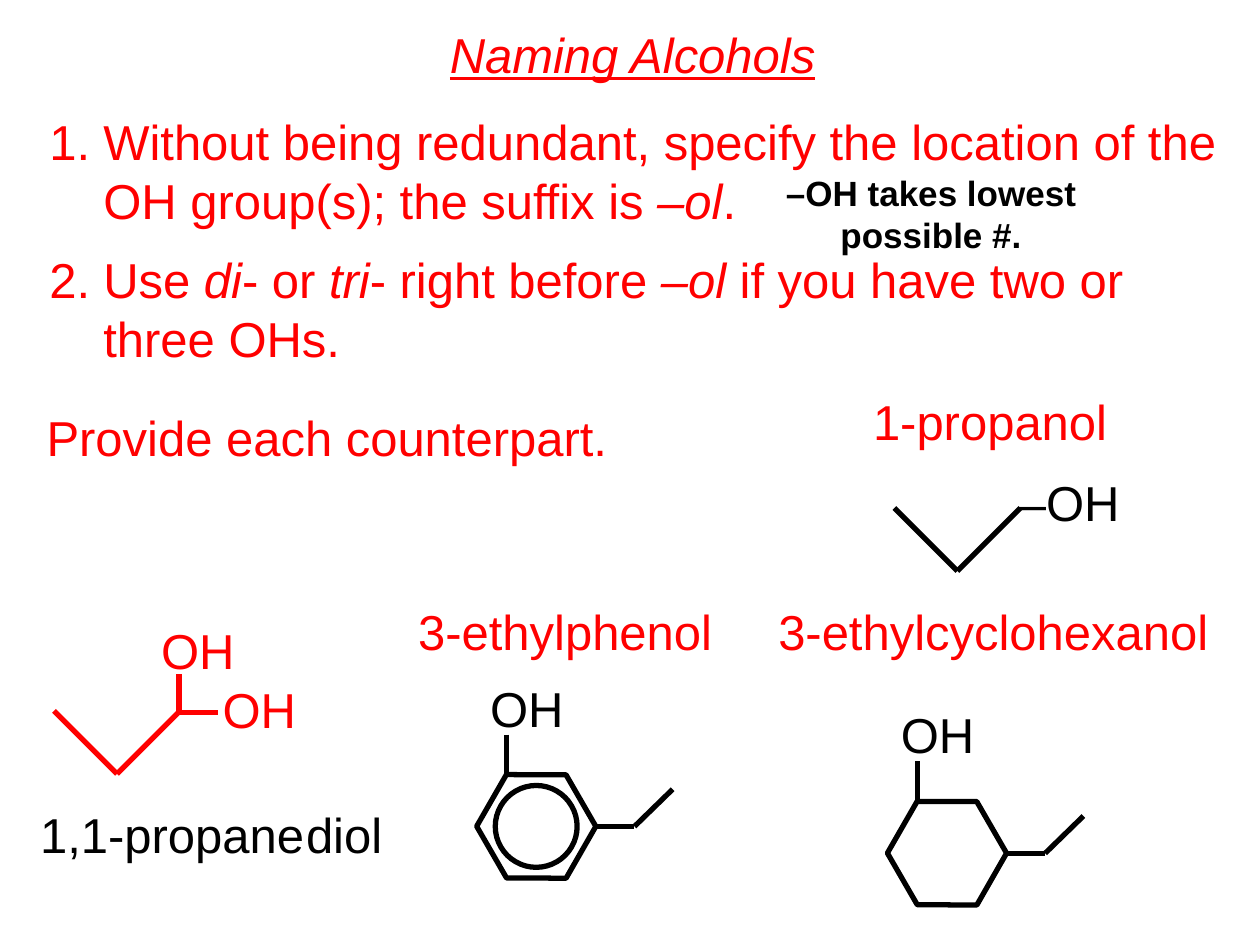
"""Build the Naming Alcohols slide."""
from lxml import etree
from pptx import Presentation
from pptx.dml.color import RGBColor
from pptx.enum.shapes import MSO_CONNECTOR, MSO_SHAPE
from pptx.enum.text import MSO_ANCHOR, MSO_AUTO_SIZE, PP_ALIGN
from pptx.oxml.ns import qn
from pptx.util import Cm, Pt

LEFT, CENTER = PP_ALIGN.LEFT, PP_ALIGN.CENTER
MIDDLE, NO_FIT = MSO_ANCHOR.MIDDLE, MSO_AUTO_SIZE.NONE
STRAIGHT = MSO_CONNECTOR.STRAIGHT
HEXAGON, OVAL = MSO_SHAPE.HEXAGON, MSO_SHAPE.OVAL
COLORS = {"red": "FF0000", "black": "000000"}
FONT = "Arial"
LINE_H = 1.45

TITLE = "*Naming Alcohols*"
TITLE_BOX = (8.79, 0.36, 7.92, LINE_H)
RULES = [
    "Without being redundant, specify the location of the OH group(s); the suffix is *–ol*.",
    "Use *di*- or *tri*- right before *–ol* if you have two or three OHs.",
]
RULES_BOX = (0.74, 2.11, 24.33, 5.43)
NOTE = ["–OH takes lowest", "possible #."]
NOTE_BOX = (15.57, 3.33, 6.4, 1.96)

# text, left, top, width, color
LABELS = [
    ("1-propanol", 17.35, 7.77, 5.54, "red"),
    ("1,1-propane", 0.56, 16.08, 6.12, "black"),
    ("diol", 5.92, 16.08, 2.34, "black"),
    ("3-ethylcyclohexanol", 15.44, 11.99, 9.47, "red"),
    ("3-ethylphenol", 8.18, 11.99, 6.73, "red"),
    ("–OH", 20.29, 9.4, 2.82, "black"),
    ("Provide each counterpart.", 0.69, 8.08, 12.12, "red"),
    ("OH", 4.24, 13.56, 1.98, "red"),
    ("OH", 3.0, 12.37, 1.98, "red"),
]
CHAINS = [(18.03, 10.24, "black"), (1.09, 14.33, "red")]
ZIGZAG = [(0, 0), (1.27, 1.27), (2.54, 0)]
DIOL_BONDS = [(3.61, 13.59), (3.61, 14.36), (4.39, 14.36)]
RINGS = [(10.81, 16.66, True), (19.09, 17.2, False)]
ETHYL = [(1.21, 0), (1.98, 0), (2.75, -0.75)]
OH_BOND = [(-0.6, -1.85), (-0.6, -1.07)]
OH_OFFSET = (-1.18, -3.12)


def write(tf, text, size=28, color="red", bold=False, underline=False,
          align=LEFT, wrap=False, spacing=None, before=0):
    """Fill a frame with paragraphs; asterisks enclose italics."""
    tf.auto_size, tf.word_wrap, tf.vertical_anchor = NO_FIT, wrap, MIDDLE
    lines = [text] if isinstance(text, str) else text
    for i, line in enumerate(lines):
        p = tf.add_paragraph() if i else tf.paragraphs[0]
        p.alignment = align
        p.space_before = Pt(before if i else 0)
        if spacing:
            p.line_spacing = Pt(spacing)
        for j, part in enumerate(line.split("*")):
            if part:
                r = p.add_run()
                r.text = part
                f = r.font
                f.name, f.size, f.bold = FONT, Pt(size), bold
                f.italic, f.underline = j % 2 == 1, underline
                f.color.rgb = RGBColor.from_string(COLORS[color])


def place(sp, box):
    """Move a placeholder to a box in centimetres."""
    sp.left, sp.top, sp.width, sp.height = map(Cm, box)


def add_label(s, text, box, **fmt):
    """Add a text box."""
    write(s.shapes.add_textbox(*map(Cm, box)).text_frame, text, **fmt)


def number(p):
    """Give a paragraph automatic numbering with a hanging indent."""
    pPr = p._p.get_or_add_pPr()
    pPr.set("marL", str(Cm(1.09)))
    pPr.set("indent", str(Cm(-1.09)))
    clr = etree.SubElement(pPr, qn("a:buClr"))
    etree.SubElement(clr, qn("a:srgbClr"), val=COLORS["red"])
    etree.SubElement(pPr, qn("a:buFont"), typeface=FONT)
    etree.SubElement(pPr, qn("a:buAutoNum"), type="arabicPeriod")


def stroke(sp, color):
    """Set a solid bond line."""
    sp.line.color.rgb = RGBColor.from_string(COLORS[color])
    sp.line.width = Pt(3)


def add_bonds(s, points, color="black", x=0, y=0):
    """Join successive points with straight bonds."""
    for (x1, y1), (x2, y2) in zip(points, points[1:]):
        ends = (x + x1, y + y1, x + x2, y + y2)
        sp = s.shapes.add_connector(STRAIGHT, *map(Cm, ends))
        stroke(sp, color)
        etree.SubElement(sp._element.spPr, qn("a:effectLst"))


def add_outline(s, kind, x, y, w, h):
    """Add an unfilled shape centred on a point."""
    sp = s.shapes.add_shape(kind, Cm(x - w / 2), Cm(y - h / 2), Cm(w), Cm(h))
    sp.fill.background()
    sp.shadow.inherit = False
    stroke(sp, "black")
    return sp


def add_ring(s, x, y, aromatic):
    """Draw a six-membered ring with its OH and ethyl groups."""
    sp = add_outline(s, HEXAGON, x, y, 2.41, 2.08)
    sp.adjustments[0] = 0.29
    sp.rotation = 60
    if aromatic:
        add_outline(s, OVAL, x, y, 1.65, 1.65)
    add_bonds(s, ETHYL, x=x, y=y)
    add_bonds(s, OH_BOND, x=x, y=y)
    dx, dy = OH_OFFSET
    add_label(s, "OH", (x + dx, y + dy, 1.98, LINE_H), color="black")


def main():
    """Assemble and save the slide."""
    prs = Presentation()
    prs.slide_width, prs.slide_height = Cm(25.4), Cm(19.05)
    s = prs.slides.add_slide(prs.slide_layouts[1])
    title, body = s.placeholders
    place(title, TITLE_BOX)
    write(title.text_frame, TITLE, underline=True, align=CENTER)
    place(body, RULES_BOX)
    write(body.text_frame, RULES, wrap=True, spacing=33.5, before=12)
    for p in body.text_frame.paragraphs:
        number(p)
    for text, x, y, w, color in LABELS:
        add_label(s, text, (x, y, w, LINE_H), color=color)
    add_label(s, NOTE, NOTE_BOX, size=20, color="black", bold=True,
              align=CENTER, spacing=24)
    for x, y, color in CHAINS:
        add_bonds(s, ZIGZAG, color, x, y)
    add_bonds(s, DIOL_BONDS, "red")
    for ring in RINGS:
        add_ring(s, *ring)
    prs.save("out.pptx")


if __name__ == "__main__":
    main()
